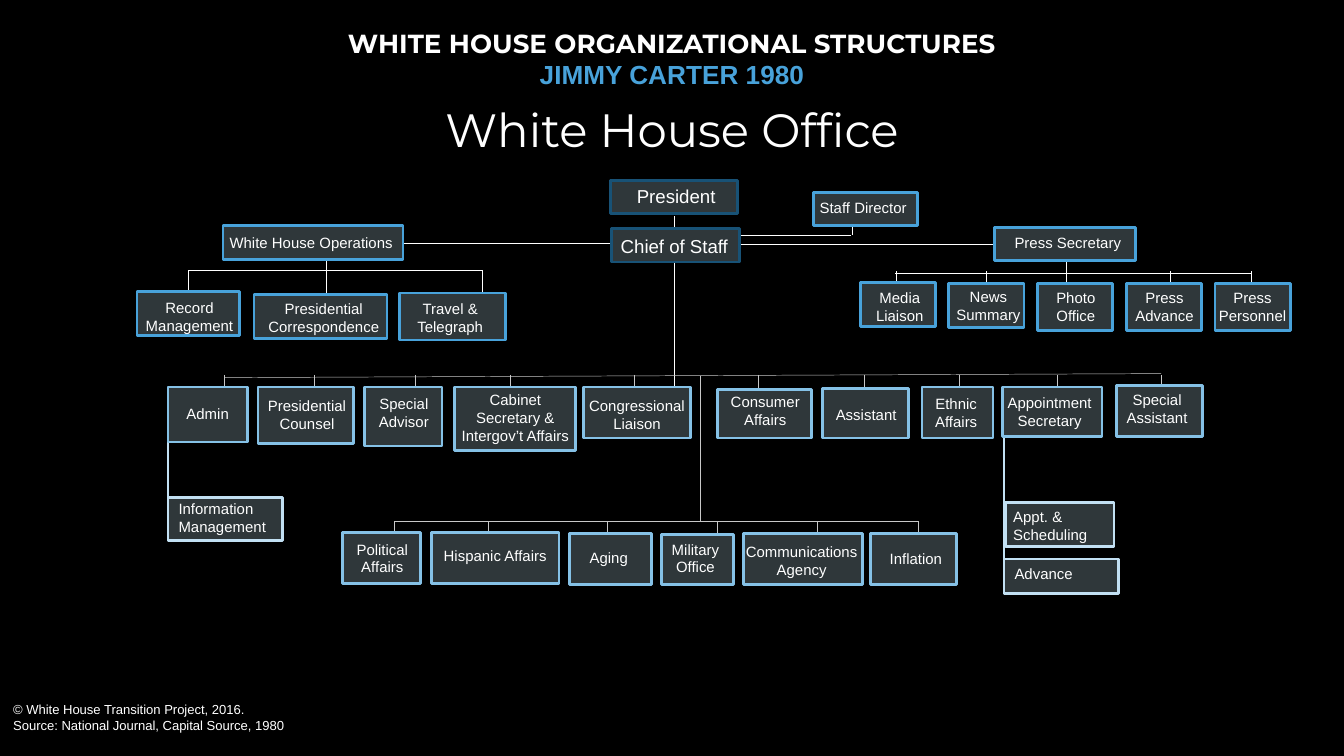
"""Build the 1980 White House Office organization chart slide."""
from lxml import etree
from pptx import Presentation
from pptx.dml.color import RGBColor
from pptx.enum.shapes import MSO_CONNECTOR, MSO_SHAPE
from pptx.enum.text import MSO_ANCHOR, MSO_AUTO_SIZE as FIT, PP_ALIGN
from pptx.oxml.ns import qn
from pptx.util import Inches, Pt

BLACK = RGBColor(0x00, 0x00, 0x00)
WHITE = RGBColor(0xFF, 0xFF, 0xFF)
GRAY = RGBColor(0xC8, 0xC8, 0xC8)
SLATE = RGBColor(0x2F, 0x37, 0x3A)
NAVY = RGBColor(0x18, 0x52, 0x76)
BLUE = RGBColor(0x48, 0xA2, 0xDA)
SKY = RGBColor(0x85, 0xC1, 0xE6)
PALE = RGBColor(0xC2, 0xE0, 0xF3)
LEFT, CENTER = PP_ALIGN.LEFT, PP_ALIGN.CENTER

HEADINGS = [
    ("WHITE HOUSE ORGANIZATIONAL STRUCTURES", dict(size=14, font="Montserrat", bold=True)),
    ("JIMMY CARTER 1980", dict(size=14, color=BLUE, bold=True)),
    ("White House Office", dict(size=25, font="Montserrat", before=6)),
]
CREDITS = ["© White House Transition Project, 2016.",
           "Source: National Journal, Capital Source, 1980"]

LEADERS = [
    ("President", (4.54, 1.34, 0.95, 0.25), (4.64, 1.33, 0.88, 0.27)),
    ("Chief of Staff", (4.55, 1.7, 0.95, 0.25), (4.52, 1.7, 1.11, 0.27)),
]
DIRECTORS = [
    ("Staff Director", (6.05, 1.43, 0.78, 0.25), (6, 1.43, 0.87, 0.24)),
    ("White House Operations", (1.66, 1.68, 1.34, 0.25), (1.61, 1.69, 1.43, 0.24)),
    ("Press Secretary", (7.4, 1.69, 1.05, 0.25), (7.45, 1.69, 1.01, 0.24)),
]
OPERATIONS = [
    ("Record Management", (1.02, 2.17, 0.76, 0.33), (0.95, 2.17, 0.92, 0.37)),
    ("Presidential Correspondence", (1.89, 2.19, 0.99, 0.33), (1.86, 2.18, 1.1, 0.37)),
    ("Travel & Telegraph", (2.97, 2.18, 0.79, 0.35), (2.79, 2.18, 1.12, 0.37)),
]
PRESS_LEFT, PRESS_PITCH, PRESS_WIDTH = 6.4, 0.66, 0.56
PRESS_DESKS = [
    ("Media Liaison", 2.1, 0.33, (6.35, 2.1, 0.69, 0.37)),
    ("News Summary", 2.11, 0.33, (7.01, 2.09, 0.69, 0.37)),
    ("Photo Office", 2.11, 0.35, (7.66, 2.1, 0.69, 0.37)),
    ("Press Advance", 2.11, 0.35, (8.32, 2.1, 0.69, 0.37)),
    ("Press Personnel", 2.11, 0.35, (8.95, 2.1, 0.74, 0.37)),
]
OFFICES = [
    ("Admin", (1.25, 2.88, 0.59, 0.41), (1.17, 2.96, 0.75, 0.24)),
    ("Presidential Counsel", (1.92, 2.88, 0.71, 0.42), (1.86, 2.9, 0.85, 0.37)),
    ("Special Advisor", (2.71, 2.88, 0.58, 0.44), (2.58, 2.89, 0.85, 0.37)),
    ("Cabinet Secretary & Intergov’t Affairs", (3.38, 2.88, 0.9, 0.47), (3.33, 2.86, 1.01, 0.5)),
    ("Congressional Liaison", (4.34, 2.88, 0.8, 0.38), (4.27, 2.9, 0.94, 0.37)),
    ("Consumer Affairs", (5.34, 2.9, 0.7, 0.36), (5.26, 2.87, 0.87, 0.37)),
    ("Assistant", (6.12, 2.89, 0.64, 0.37), (6.04, 2.97, 0.81, 0.24)),
    ("Ethnic Affairs", (6.86, 2.88, 0.53, 0.38), (6.83, 2.89, 0.57, 0.37)),
    ("Appointment Secretary", (7.46, 2.88, 0.74, 0.37), (7.39, 2.88, 0.84, 0.37)),
    ("Special Assistant", (8.31, 2.87, 0.64, 0.38), (8.24, 2.86, 0.74, 0.37)),
    ("Political Affairs", (2.55, 3.96, 0.58, 0.38), (2.42, 3.97, 0.85, 0.37)),
    ("Hispanic Affairs", (3.21, 3.96, 0.95, 0.38), (3.18, 4.02, 1.01, 0.24)),
    ("Aging", (4.24, 3.97, 0.61, 0.38), (4.06, 4.03, 0.94, 0.24)),
    ("Military Office", (4.92, 3.98, 0.54, 0.37), (4.74, 3.97, 0.87, 0.37)),
    ("Communications Agency", (5.53, 3.97, 0.89, 0.38), (5.41, 3.99, 1.11, 0.37)),
    ("Inflation", (6.48, 3.97, 0.64, 0.38), (6.51, 4.04, 0.61, 0.24)),
]
SUBUNITS = [
    ("Information Management", (1.25, 3.7, 0.85, 0.32), (1.23, 3.67, 1.01, 0.37)),
    ("Appt. & Scheduling", (7.48, 3.74, 0.81, 0.33), (7.44, 3.73, 0.79, 0.37)),
    ("Advance", (7.47, 4.16, 0.85, 0.26), (7.45, 4.15, 1.01, 0.24)),
]

LINKS = [
    (WHITE, 0.25, [(5.02, 1.61, 5.02, 3.08), (4.64, 1.81, 2.63, 1.81), (7.68, 1.82, 5.47, 1.82),
                   (6.33, 1.75, 5.47, 1.75), (6.34, 1.46, 6.34, 1.75),
                   (3.59, 2.01, 1.4, 2.01), (9.31, 2.03, 6.66, 2.03),
                   (2.43, 1.82, 2.43, 2.3), (7.93, 1.74, 7.93, 2.2), (7.34, 2.02, 7.34, 2.11)]),
    (GRAY, 0.25, [(8.64, 2.78, 1.67, 2.81), (5.21, 2.8, 5.21, 3.88), (6.83, 3.88, 2.93, 3.88)]),
    (PALE, 1.5, [(1.25, 3.18, 1.25, 4.02), (7.47, 3.16, 7.47, 4.42)]),
]
DROPS = [
    (WHITE, 2.01, 2.3, [1.4, 3.59]),
    (WHITE, 2.02, 2.24, [6.67, 8.71, 9.31]),
    (GRAY, 2.79, 3.25, [1.67, 2.34, 3.09, 3.8, 4.72, 5.64, 6.43, 7.14, 7.87, 8.64]),
    (GRAY, 3.88, 4.34, [2.93, 3.63, 4.52, 5.34, 6.08, 6.83]),
]


def write(frame, text, size=8, font="Arial", color=WHITE, bold=False, align=LEFT, before=0):
    """Write text as the next paragraph of a frame."""
    line = frame.paragraphs[0] if not frame.text else frame.add_paragraph()
    line.alignment, line.space_before = align, Pt(before)
    run = line.add_run()
    run.text = text
    run.font.size, run.font.name, run.font.bold = Pt(size), font, bold
    run.font.color.rgb = color


def text_frame(slide, place):
    """Add a wrapping text box and return its frame."""
    frame = slide.shapes.add_textbox(*map(Inches, place)).text_frame
    frame.word_wrap, frame.auto_size = True, FIT.SHAPE_TO_FIT_TEXT
    return frame


def add_link(slide, ends, color, weight):
    """Draw a straight reporting line."""
    link = slide.shapes.add_connector(MSO_CONNECTOR.STRAIGHT, *map(Inches, ends))
    link.line.color.rgb, link.line.width = color, Pt(weight)
    etree.SubElement(link._element.spPr, qn("a:effectLst"))


def add_units(slide, units, border, **style):
    """Draw the boxes of one level with their labels."""
    for name, place, label_place in units:
        box = slide.shapes.add_shape(MSO_SHAPE.RECTANGLE, *map(Inches, place))
        box.shadow.inherit = False
        box.fill.solid()
        box.fill.fore_color.rgb = SLATE
        box.line.color.rgb, box.line.width = border, Pt(1.5)
        write(text_frame(slide, label_place), name, **style)


def press_units():
    """Space the press desks evenly."""
    for i, (name, top, height, label_place) in enumerate(PRESS_DESKS):
        yield name, (PRESS_LEFT + i * PRESS_PITCH, top, PRESS_WIDTH, height), label_place


def main():
    """Assemble and save the slide."""
    deck = Presentation()
    deck.slide_width = Inches(10)
    deck.slide_height = deck.slide_width * 9 // 16
    slide = deck.slides.add_slide(deck.slide_layouts[5])
    slide.background.fill.solid()
    slide.background.fill.fore_color.rgb = BLACK

    title = slide.shapes.title
    title.left, title.top, title.width, title.height = map(Inches, (0.75, 0.1, 8.5, 1.17))
    title.text_frame.vertical_anchor = MSO_ANCHOR.MIDDLE
    title.text_frame.auto_size = FIT.NONE
    for heading, style in HEADINGS:
        write(title.text_frame, heading, align=CENTER, **style)

    for color, weight, links in LINKS:
        for ends in links:
            add_link(slide, ends, color, weight)
    for color, top, bottom, columns in DROPS:
        for x in columns:
            add_link(slide, (x, top, x, bottom), color, 0.25)

    add_units(slide, LEADERS, NAVY, size=10)
    add_units(slide, DIRECTORS, BLUE)
    add_units(slide, OPERATIONS, BLUE, align=CENTER)
    add_units(slide, press_units(), BLUE, align=CENTER)
    add_units(slide, OFFICES, SKY, align=CENTER)
    add_units(slide, SUBUNITS, PALE)

    credit_frame = text_frame(slide, (0, 5.17, 2.66, 0.34))
    for credit in CREDITS:
        write(credit_frame, credit, size=7)
    deck.save("out.pptx")


if __name__ == "__main__":
    main()
